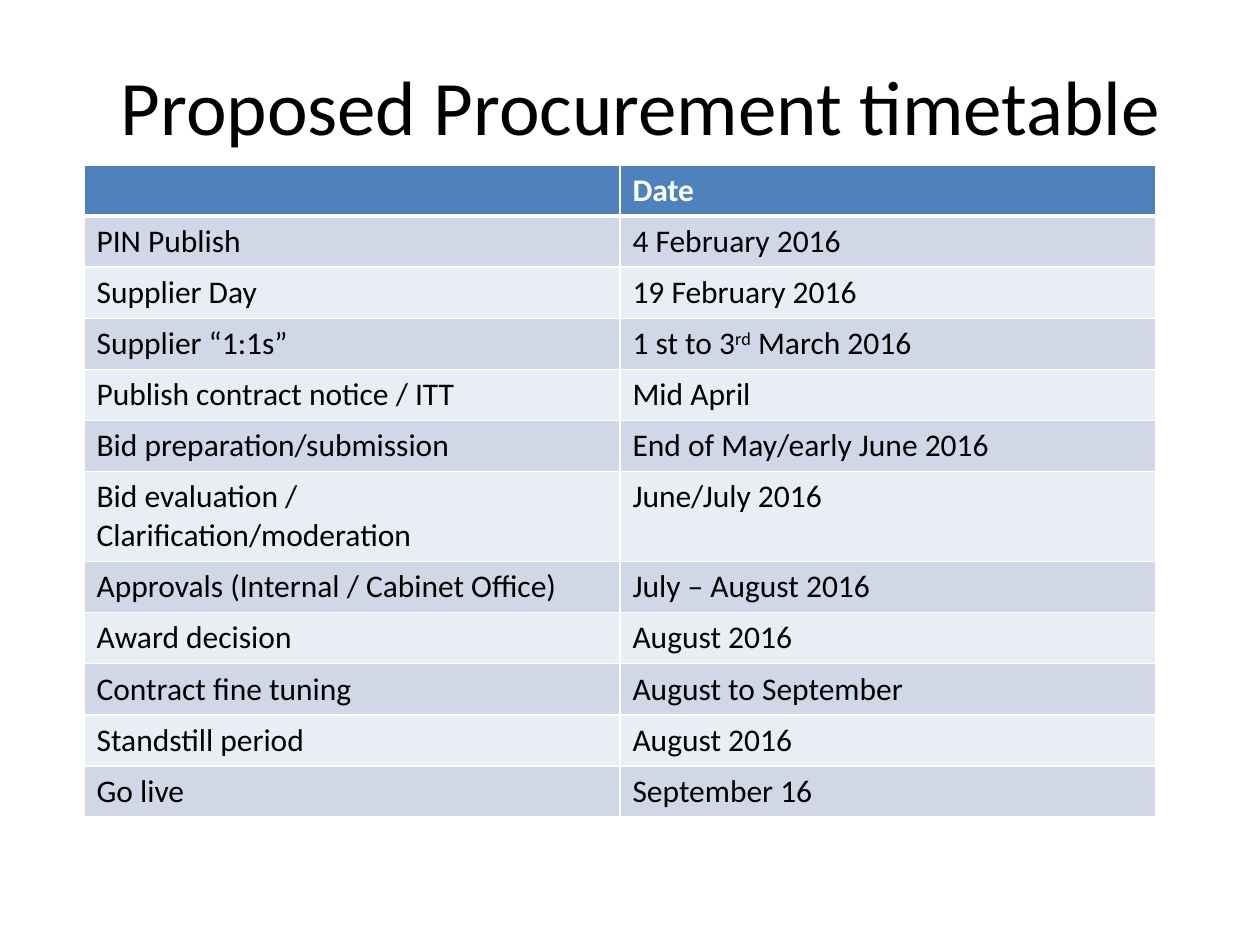
import lxml.etree
import pptx
import pptx.dml.color
import pptx.enum.text
import pptx.oxml.ns
import pptx.util

PX = 914400 // 126
HEADER, BANDS = "4F81BD", ("D0D8E8", "E9EDF4")
WHITE, BLACK = "FFFFFF", "000000"
ROW_H, TALL_ROW_H = 51, 90

# A cell is a string, or a tuple whose odd parts are superscript.
TIMETABLE = [
    ("", "Date"),
    ("PIN Publish", "4 February 2016"),
    ("Supplier Day", "19 February 2016"),
    ("Supplier “1:1s”", ("1 st to 3", "rd", " March 2016")),
    ("Publish contract notice / ITT", "Mid April"),
    ("Bid preparation/submission", "End of May/early June 2016"),
    ("Bid evaluation / Clarification/moderation", "June/July 2016"),
    ("Approvals (Internal / Cabinet Office)", "July – August 2016"),
    ("Award decision", "August 2016"),
    ("Contract fine tuning", "August to September"),
    ("Standstill period", "August 2016"),
    ("Go live", "September 16"),
]
TALL_ROW = 6


def px(n):
    return pptx.util.Emu(n * PX)


def rgb(color):
    return pptx.dml.color.RGBColor.from_string(color)


def add_text(p, text, size=18, color=BLACK, bold=False, superscript=False):
    r = p.add_run()
    r.text = text
    r.font.name = "Calibri"
    r.font.size = pptx.util.Pt(size)
    r.font.bold = bold
    r.font.color.rgb = rgb(color)
    if superscript:
        r._r.get_or_add_rPr().set("baseline", "30000")


def set_borders(cell, color=WHITE, **widths):
    """Draw all four sides 1 pt wide, except those given as L, R, T or B."""
    qn = pptx.oxml.ns.qn
    tcPr = cell._tc.get_or_add_tcPr()
    for side in "LRTB":
        width = pptx.util.Pt(widths.get(side, 1))
        ln = lxml.etree.SubElement(tcPr, qn(f"a:ln{side}"), w=str(width))
        fill = lxml.etree.SubElement(ln, qn("a:solidFill"))
        lxml.etree.SubElement(fill, qn("a:srgbClr"), val=color)


class SlideBuilder:
    def __init__(self, prs):
        self.slide = prs.slides.add_slide(prs.slide_layouts[5])

    def title(self, text, x, y, w, h):
        sp = self.slide.shapes.title
        sp.left, sp.top, sp.width, sp.height = map(px, (x, y, w, h))
        tf = sp.text_frame
        tf.word_wrap = True
        tf.vertical_anchor = pptx.enum.text.MSO_ANCHOR.MIDDLE
        p = tf.paragraphs[0]
        p.alignment = pptx.enum.text.PP_ALIGN.CENTER
        add_text(p, text, size=44)

    def cell(self, cell, content, row):
        header = row == 0
        if header:
            set_borders(cell, B=3)
        elif row == 1:
            set_borders(cell, T=3)
        else:
            set_borders(cell)
        cell.fill.solid()
        cell.fill.fore_color.rgb = rgb(HEADER if header else BANDS[(row - 1) % 2])
        parts = (content,) if isinstance(content, str) else content
        for i, part in enumerate(parts):
            if part:
                add_text(cell.text_frame.paragraphs[0], part, bold=header,
                         color=WHITE if header else BLACK, superscript=i % 2 == 1)

    def table(self, rows, x, y, col_w, heights):
        cols = len(rows[0])
        table = self.slide.shapes.add_table(
            len(rows), cols, px(x), px(y), px(col_w * cols), px(sum(heights))).table
        for col in table.columns:
            col.width = px(col_w)
        for i, (values, height) in enumerate(zip(rows, heights)):
            table.rows[i].height = px(height)
            for j, content in enumerate(values):
                self.cell(table.cell(i, j), content, i)


def main():
    prs = pptx.Presentation()
    prs.slide_width, prs.slide_height = px(1260), px(945)
    s = SlideBuilder(prs)
    s.title("Proposed Procurement timetable", 74, 26, 1134, 158)
    heights = [TALL_ROW_H if i == TALL_ROW else ROW_H for i in range(len(TIMETABLE))]
    s.table(TIMETABLE, 84, 165, 536, heights)
    prs.save("out.pptx")


if __name__ == "__main__":
    main()
